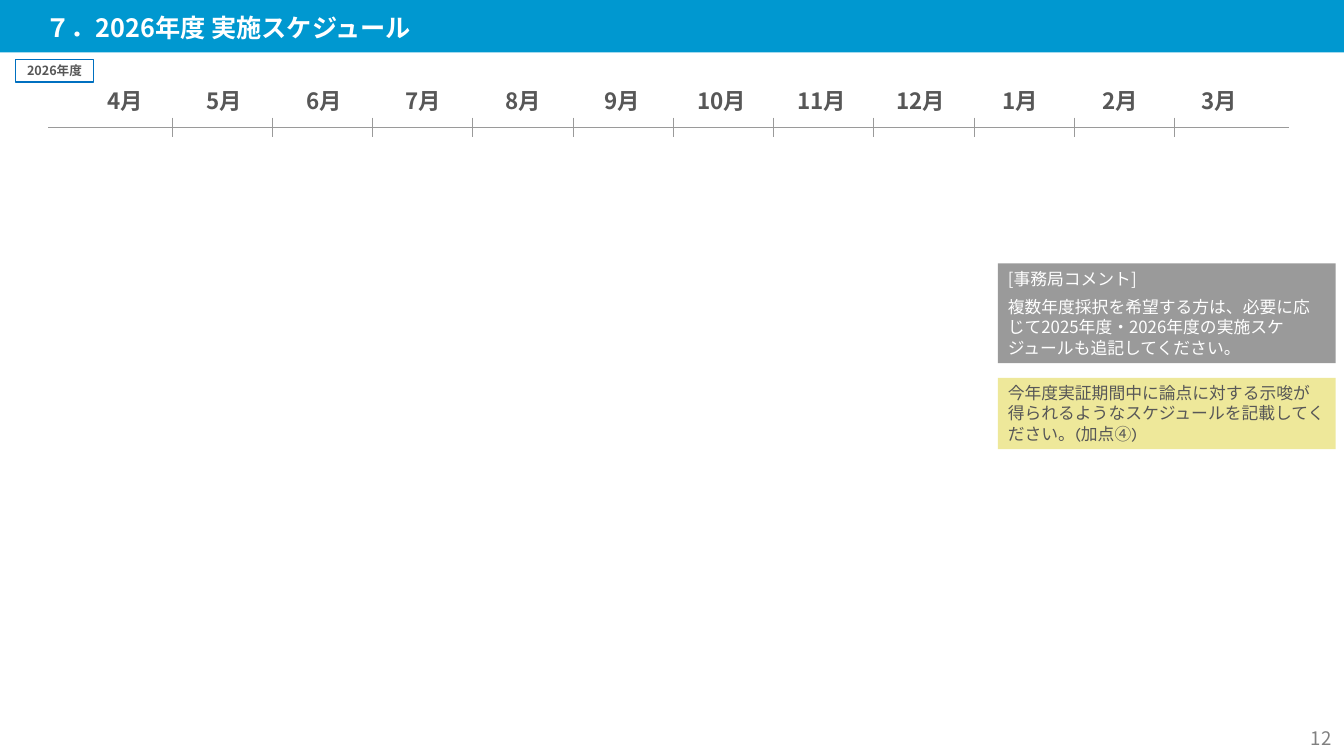
from lxml.etree import SubElement
from pptx import Presentation
from pptx.dml.color import RGBColor
from pptx.enum.lang import MSO_LANGUAGE_ID as Language
from pptx.enum.shapes import MSO_CONNECTOR as Connector, MSO_SHAPE as Shape
from pptx.enum.text import MSO_ANCHOR as Anchor, MSO_AUTO_SIZE as AutoSize, PP_ALIGN as Align
from pptx.oxml.ns import qn
from pptx.util import Pt

COLORS = {
    "header": "0098D0",
    "white": "FFFFFF",
    "text": "575757",
    "gray": "9A9A9A",
    "yellow": "EEE89A",
    "tag_line": "0070C0",
    "page_number": "808080",
}
JAPANESE_FONT = "Noto Sans CJK JP"
MONTHS = [4, 5, 6, 7, 8, 9, 10, 11, 12, 1, 2, 3]
MONTH_LEFT, MONTH_PITCH = 61.1, 71.08
TICK_LEFT, TICK_PITCH = 123.12, 71.58
AXIS_TOP, TICK_TOP, TICK_BOTTOM = 90.9, 84, 97.9


def color(name):
    return RGBColor.from_string(COLORS[name])


def write_text(shape, *texts, size=12, fill="text", bold=False, font=JAPANESE_FONT,
               align=Align.LEFT, anchor=Anchor.TOP, line_spacing=1.0,
               before=0, after=0, margins=(7.2, 3.6)):
    """Fill the shape with one paragraph per text; margins are (sides, top and bottom)."""
    frame = shape.text_frame
    frame.word_wrap = True
    frame.auto_size = AutoSize.NONE
    frame.vertical_anchor = anchor
    frame.margin_left = frame.margin_right = Pt(margins[0])
    frame.margin_top = frame.margin_bottom = Pt(margins[1])
    for index, text in enumerate(texts):
        paragraph = frame.add_paragraph() if index else frame.paragraphs[0]
        paragraph.alignment = align
        paragraph.line_spacing = line_spacing
        paragraph.space_before = Pt(before if index else 0)
        paragraph.space_after = Pt(after)
        run = paragraph.add_run()
        run.text = text
        run.font.size = Pt(size)
        run.font.bold = bold
        run.font.color.rgb = color(fill)
        run.font.name = font
        run.font.language_id = Language.JAPANESE
        latin = run.font._element.find(qn("a:latin"))
        east_asian = SubElement(run.font._element, qn("a:ea"), typeface=JAPANESE_FONT)
        latin.addnext(east_asian)


class ScheduleSlide:
    def __init__(self, presentation):
        self.slide = presentation.slides.add_slide(presentation.slide_layouts[5])
        self.shapes = self.slide.shapes
        self.line_width = Pt(0.75)

    def title(self, left, top, width, height, text, **style):
        title = self.shapes.title
        title.left, title.top, title.width, title.height = map(Pt, (left, top, width, height))
        write_text(title, text, **style)
        self.shapes[-1].element.addnext(title.element)

    def box(self, left, top, width, height, *texts, background=None, outline=None, **style):
        box = self.shapes.add_shape(Shape.RECTANGLE, *map(Pt, (left, top, width, height)))
        box.shadow.inherit = False
        if background:
            box.fill.solid()
            box.fill.fore_color.rgb = color(background)
        else:
            box.fill.background()
        if outline:
            box.line.color.rgb = color(outline)
            box.line.width = self.line_width
        else:
            box.line.fill.background()
        if texts:
            write_text(box, *texts, **style)

    def label(self, left, top, width, height, text, **style):
        label = self.shapes.add_textbox(*map(Pt, (left, top, width, height)))
        write_text(label, text, **style)

    def line(self, start_x, start_y, end_x, end_y):
        line = self.shapes.add_connector(
            Connector.STRAIGHT, *map(Pt, (start_x, start_y, end_x, end_y)))
        line.line.color.rgb = color("gray")
        line.line.width = self.line_width
        SubElement(line._element.spPr, qn("a:effectLst"))


def main():
    presentation = Presentation()
    presentation.slide_width, presentation.slide_height = Pt(960), Pt(540)
    schedule = ScheduleSlide(presentation)

    schedule.box(0, 0, 960, 37.4, background="header")
    schedule.title(25.2, 0, 910, 37.4, "７．2026年度 実施スケジュール", size=18, fill="white",
                   bold=True, anchor=Anchor.MIDDLE, line_spacing=1.1, after=3)
    schedule.label(910.8, 519.1, 40.3, 15.8, "12", size=13.3, fill="page_number",
                   align=Align.RIGHT, anchor=Anchor.BOTTOM, margins=(0, 0))

    schedule.box(712.8, 188.2, 241.2, 71.3, "[事務局コメント]",
                 "複数年度採択を希望する方は、必要に応じて2025年度・2026年度の実施スケジュールも追記してください。",
                 background="gray", fill="white", after=6)
    schedule.box(712.8, 270, 241.2, 50.9,
                 "今年度実証期間中に論点に対する示唆が得られるようなスケジュールを記載してください。(加点④)",
                 background="yellow", font="Karla", after=6)
    schedule.box(10.8, 42.4, 56.2, 16.2, "2026年度", outline="tag_line", size=9, bold=True,
                 align=Align.CENTER, anchor=Anchor.MIDDLE)

    for index, month in enumerate(MONTHS):
        schedule.label(MONTH_LEFT + index * MONTH_PITCH, 54.7, 56.2, 36.7, f"{month}月",
                       size=16, bold=True, align=Align.CENTER, anchor=Anchor.MIDDLE,
                       line_spacing=0.9, after=10)
    schedule.line(34.4, AXIS_TOP, 920.4, AXIS_TOP)
    for index in range(len(MONTHS) - 1):
        tick_x = TICK_LEFT + index * TICK_PITCH
        schedule.line(tick_x, TICK_TOP, tick_x, TICK_BOTTOM)

    presentation.save("out.pptx")


if __name__ == "__main__":
    main()
